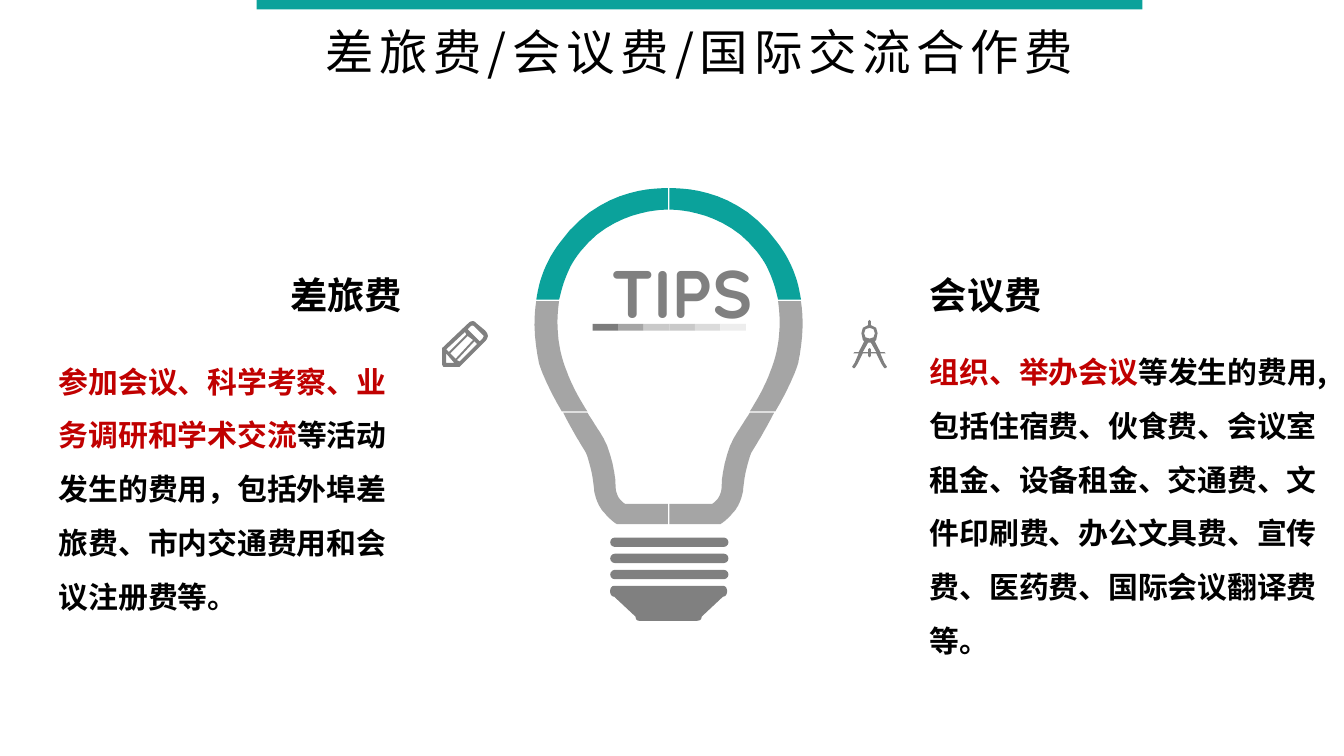
from lxml.etree import SubElement
from pptx import Presentation
from pptx.dml.color import RGBColor
from pptx.enum.shapes import MSO_SHAPE
from pptx.enum.text import MSO_ANCHOR, MSO_AUTO_SIZE, PP_ALIGN
from pptx.oxml.ns import qn
from pptx.util import Inches, Pt

COLORS = {
    "teal": "0BA29B", "silver": "A5A5A5", "gray": "808080",
    "black": "000000", "red": "C00000",
}
UNDERLINE_COLORS = ["7C7C7C", "A5A5A5", "C9C9C9", "C9C9C9", "DBDBDB", "EDEDED"]
CJK_FONT = "Noto Sans CJK SC"
BULB_WIDTH = 2.03
COMPASS_WIDTH = 0.26

# Outlines in inches: (x, y) is a corner, six numbers are a Bézier curve.
BULB_SIDE = [
    (0.03, 0.84), (0, 1.03, 0.03, 1.19, 0.05, 1.3), (0.08, 1.4, 0.15, 1.54, 0.22, 1.66),
    (0.41, 1.66), (0.36, 1.58, 0.3, 1.48, 0.26, 1.37), (0.2, 1.23, 0.17, 1.04, 0.2, 0.84),
]
BULB_DOME = [
    (0.2, 0.83), (0.23, 0.7, 0.27, 0.58, 0.36, 0.47), (0.59, 0.18, 0.93, 0.16, 1.01, 0.16),
    (1.01, 0), (0.85, 0, 0.48, 0.03, 0.21, 0.4), (0.1, 0.54, 0.05, 0.69, 0.03, 0.83),
]
BULB_NECK = [
    (0.62, 2.21), (0.62, 2.14, 0.59, 1.97, 0.53, 1.86), (0.5, 1.81, 0.46, 1.75, 0.41, 1.67),
    (0.23, 1.67), (0.3, 1.81, 0.37, 1.92, 0.4, 1.97), (0.44, 2.07, 0.46, 2.21, 0.46, 2.25),
    (0.47, 2.3, 0.49, 2.37, 0.54, 2.42), (0.59, 2.48, 0.63, 2.5, 0.63, 2.5),
    (1.01, 2.5), (1.01, 2.35), (0.69, 2.35), (0.68, 2.34, 0.62, 2.31, 0.62, 2.21),
]
BULB_SOCKET = [
    (1.42, 2.96), (0.61, 2.96), (0.59, 2.96, 0.58, 2.98, 0.58, 3),
    (0.58, 3.02, 0.59, 3.04, 0.61, 3.04), (0.77, 3.19), (0.77, 3.21, 0.78, 3.22, 0.8, 3.22),
    (1.22, 3.22), (1.25, 3.22, 1.26, 3.21, 1.26, 3.19), (1.42, 3.04),
    (1.44, 3.04, 1.45, 3.02, 1.45, 3), (1.45, 2.98, 1.44, 2.96, 1.42, 2.96),
]
PENCIL = [
    [(0.34, 0.11), (0.34, 0.1, 0.33, 0.08, 0.32, 0.07), (0.26, 0.02),
     (0.25, 0.01, 0.24, 0, 0.23, 0), (0.21, 0, 0.2, 0.01, 0.19, 0.02), (0, 0.2), (0, 0.32),
     (0, 0.33, 0.01, 0.34, 0.01, 0.34), (0.13, 0.34), (0.14, 0.33), (0.32, 0.15),
     (0.33, 0.14, 0.34, 0.12, 0.34, 0.11)],
    [(0.17, 0.08), (0.18, 0.1), (0.05, 0.23), (0.03, 0.21)],
    [(0.03, 0.31), (0.03, 0.24), (0.09, 0.31)],
    [(0.06, 0.24), (0.19, 0.11), (0.23, 0.14), (0.1, 0.28)],
    [(0.13, 0.3), (0.11, 0.29), (0.24, 0.15), (0.26, 0.17)],
    [(0.31, 0.11), (0.3, 0.13), (0.28, 0.15), (0.19, 0.06), (0.21, 0.04),
     (0.22, 0.03, 0.23, 0.03, 0.24, 0.04), (0.3, 0.1)],
]
COMPASS_HALVES = [
    [(0.13, 0), (0.12, 0.01), (0.12, 0.04), (0.08, 0.06), (0.07, 0.1), (0.08, 0.15),
     (0.09, 0.16), (0.05, 0.24), (0.02, 0.24), (0.01, 0.25), (0.02, 0.25), (0.05, 0.25),
     (0.02, 0.32), (0, 0.35), (0.01, 0.36), (0.02, 0.36), (0.04, 0.33), (0.08, 0.25),
     (0.12, 0.25), (0.12, 0.27), (0.13, 0.28)],
    [(0.13, 0.17), (0.12, 0.17), (0.08, 0.24), (0.12, 0.24), (0.12, 0.22), (0.13, 0.21)],
    [(0.13, 0.06), (0.1, 0.07), (0.09, 0.1), (0.1, 0.13), (0.13, 0.14)],
]


def flatten(outline, steps=12):
    """Turn corners and Bézier curves into a list of points."""
    points = []
    for item in outline:
        if len(item) == 2:
            points.append(item)
            continue
        controls = [points[-1], item[:2], item[2:4], item[4:]]
        for step in range(1, steps + 1):
            t = step / steps
            weights = [(1 - t) ** 3, 3 * t * (1 - t) ** 2, 3 * t * t * (1 - t), t ** 3]
            points.append(tuple(
                sum(weight * control[axis] for weight, control in zip(weights, controls))
                for axis in (0, 1)))
    return points


def mirror(points, width):
    return [(width - x, y) for x, y in points]


def paint(shape, color):
    shape.shadow.inherit = False
    shape.fill.solid()
    shape.fill.fore_color.rgb = RGBColor.from_string(color)
    shape.line.fill.background()


def add_block(slide, kind, left, top, width, height, color):
    shape = slide.shapes.add_shape(
        kind, Inches(left), Inches(top), Inches(width), Inches(height))
    paint(shape, color)
    return shape


def add_outline(slide, left, top, contours, color):
    """Draw point lists as one filled shape; later contours are holes."""
    units = [[(x * 1000, y * 1000) for x, y in contour] for contour in contours]
    builder = slide.shapes.build_freeform(*units[0][0], scale=Inches(1) / 1000)
    for index, contour in enumerate(units):
        if index:
            builder.move_to(*contour[0])
        builder.add_line_segments(contour[1:], close=True)
    paint(builder.convert_to_shape(Inches(left), Inches(top)), color)


def write(shape, pieces, size, bold=True, font=CJK_FONT, anchor=MSO_ANCHOR.MIDDLE):
    """Fill the first paragraph with (text, color) runs and return it."""
    frame = shape.text_frame
    frame.word_wrap = True
    frame.auto_size = MSO_AUTO_SIZE.NONE
    frame.vertical_anchor = anchor
    paragraph = frame.paragraphs[0]
    for text, color in pieces:
        run = paragraph.add_run()
        run.text = text
        run.font.size = Pt(size)
        run.font.bold = bold
        run.font.color.rgb = RGBColor.from_string(COLORS[color])
        run.font.name = font
        SubElement(run.font._element, qn("a:ea"), typeface=font)
    return paragraph


def add_text(slide, left, top, width, height, pieces, size, **options):
    box = slide.shapes.add_textbox(Inches(left), Inches(top), Inches(width), Inches(height))
    return write(box, pieces, size, **options)


def add_header(slide, left, top, width):
    add_block(slide, MSO_SHAPE.RECTANGLE, left, top, width, 0.07, COLORS["teal"])
    title = slide.shapes.title
    title.left, title.top = Inches(left + 0.18), Inches(top + 0.11)
    title.width, title.height = Inches(width - 0.36), Inches(0.54)
    paragraph = write(title, [("差旅费/会议费/国际交流合作费", "black")], 26, bold=False)
    paragraph.alignment = PP_ALIGN.CENTER
    for run in paragraph.runs:
        run.font._element.set("spc", "300")


def add_bulb(slide, left, top):
    for outline, color in [(BULB_SIDE, "silver"), (BULB_DOME, "teal"), (BULB_NECK, "silver")]:
        points = flatten(outline)
        for half in (points, mirror(points, BULB_WIDTH)):
            add_outline(slide, left, top, [half], COLORS[color])
    for index, color in enumerate(UNDERLINE_COLORS):
        add_block(slide, MSO_SHAPE.RECTANGLE, left + 0.45 + 0.19 * index, top + 1.01,
                  0.19, 0.05, color)
    for index in range(3):
        thread = add_block(slide, MSO_SHAPE.ROUNDED_RECTANGLE, left + 0.58,
                           top + 2.6 + 0.12 * index, 0.88, 0.07, COLORS["gray"])
        thread.adjustments[0] = 0.5
    add_outline(slide, left, top, [flatten(BULB_SOCKET)], COLORS["gray"])
    add_text(slide, left + 0.49, top + 0.42, 1.99, 0.71, [("TIPS", "gray")], 36,
             font="Quicksand", anchor=MSO_ANCHOR.TOP)


def add_expense(slide, heading, heading_left, pieces, left, top, width, height):
    add_text(slide, heading_left, 1.97, 2.12, 0.44, [(heading, "black")], 20)
    paragraph = add_text(slide, left, top, width, height, pieces, 16, anchor=MSO_ANCHOR.TOP)
    paragraph.line_spacing = Pt(28.8)
    paragraph._p.get_or_add_pPr().set("hangingPunct", "1")


def main():
    presentation = Presentation()
    presentation.slide_width = Inches(10)
    presentation.slide_height = presentation.slide_width * 9 // 16
    slide = presentation.slides.add_slide(presentation.slide_layouts[5])
    add_header(slide, 1.91, 0, 6.59)
    add_bulb(slide, 3.96, 1.4)
    add_outline(slide, 3.29, 2.39, [flatten(contour) for contour in PENCIL], COLORS["gray"])
    compass = [half + mirror(half, COMPASS_WIDTH)[::-1] for half in COMPASS_HALVES]
    add_outline(slide, 6.34, 2.38, compass, COLORS["gray"])
    add_expense(slide, "差旅费", 2.06, [
        ("参加会议、科学考察、业务调研和学术交流", "red"),
        ("等活动发生的费用，包括外埠差旅费、市内交通费用和会议注册费等。", "black"),
    ], 0.34, 2.52, 2.76, 2.12)
    add_expense(slide, "会议费", 6.82, [
        ("组织、举办会议", "red"),
        ("等发生的费用,包括住宿费、伙食费、会议室租金、设备租金、交通费、文件印刷费、"
         "办公文具费、宣传费、医药费、国际会议翻译费等。", "black"),
    ], 6.82, 2.45, 3.1, 2.52)
    presentation.save("out.pptx")


if __name__ == "__main__":
    main()
